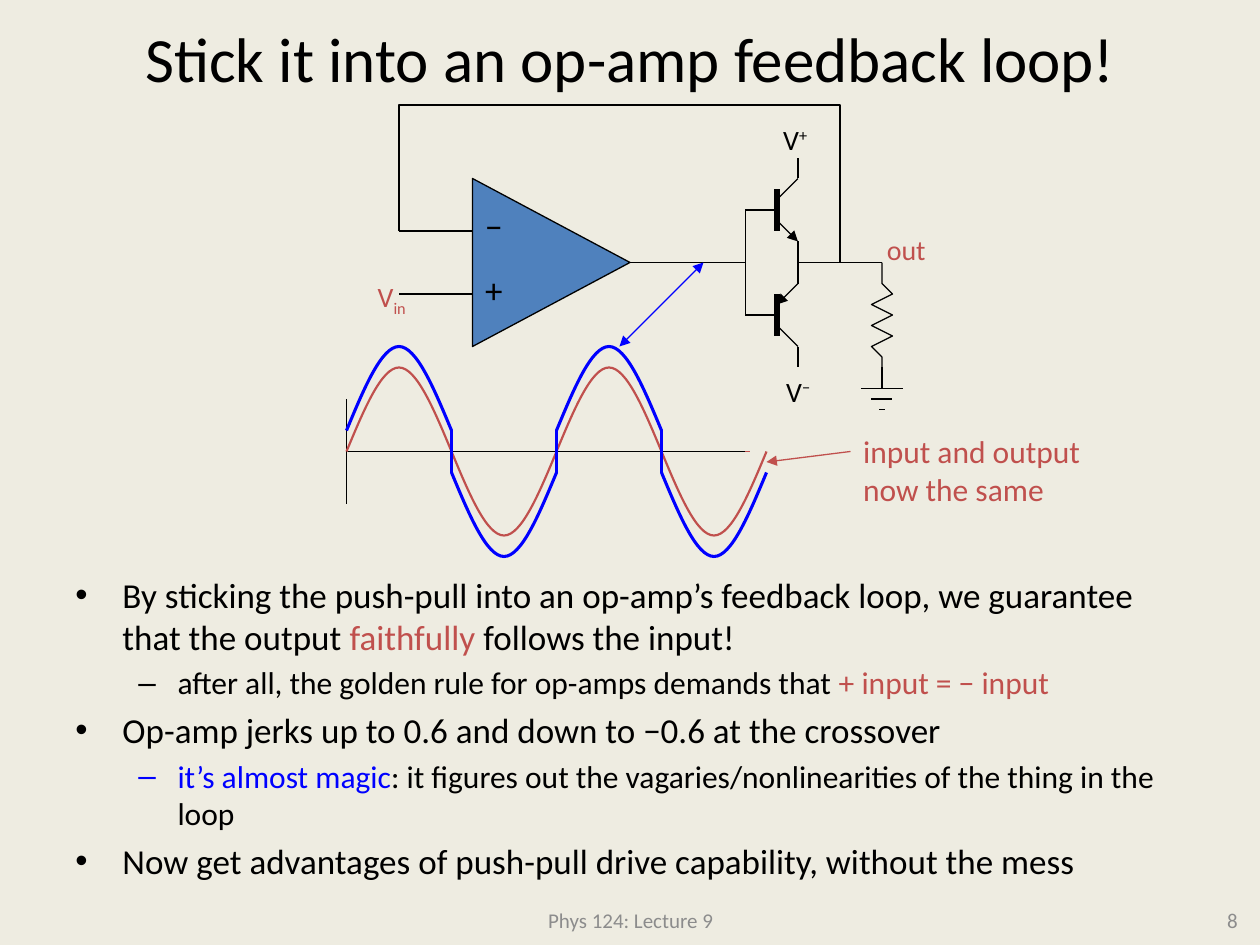
"""Slide on a push-pull stage inside an op-amp feedback loop."""
from lxml.etree import SubElement
from pptx import Presentation
from pptx.dml.color import RGBColor
from pptx.enum.shapes import MSO_CONNECTOR, MSO_SHAPE
from pptx.enum.text import MSO_ANCHOR, PP_ALIGN
from pptx.oxml.ns import qn
from pptx.util import Cm, Pt

COLORS = {"paper": "EEECE1", "black": "000000", "gray": "8C8C8C",
          "red": "C0504D", "blue": "0000FF", "amp": "4F81BD"}
RGB = {name: RGBColor.from_string(value) for name, value in COLORS.items()}
GRID = Cm(2.54) // 12
LEFT, CENTER, RIGHT = PP_ALIGN.LEFT, PP_ALIGN.CENTER, PP_ALIGN.RIGHT
TOP, MIDDLE = MSO_ANCHOR.TOP, MSO_ANCHOR.MIDDLE

prs = Presentation()
prs.slide_width, prs.slide_height = Cm(25.4), Cm(19.05)
s = prs.slides.add_slide(prs.slide_layouts[6])
s.background.fill.solid()
s.background.fill.fore_color.rgb = RGB["paper"]


def add_text(p, text, size=20, color="black", base=0):
    r = p.add_run()
    r.text = text
    r.font.name = "Calibri"
    r.font.size = Pt(size)
    r.font.color.rgb = RGB[color]
    if base:
        r._r.get_or_add_rPr().set("baseline", str(base * 1000))


def add_line(x1, y1, x2, y2, color="black", width=0.75, ends=()):
    ln = s.shapes.add_connector(MSO_CONNECTOR.STRAIGHT, *[round(v * GRID) for v in (x1, y1, x2, y2)])
    ln.line.color.rgb = RGB[color]
    ln.line.width = Pt(width)
    SubElement(ln._element.spPr, qn("a:effectLst"))
    for end in ends:
        SubElement(ln.line._get_or_add_ln(), qn(f"a:{end}")).set("type", "triangle")


bullets = [
    (0, [("By sticking the push-pull into an op-amp’s feedback loop, we guarantee that the output ", "black"),
         ("faithfully", "red"), (" follows the input!", "black")]),
    (1, [("after all, the golden rule for op-amps demands that ", "black"), ("+ input = − input", "red")]),
    (0, [("Op-amp jerks up to 0.6 and down to −0.6 at the crossover", "black")]),
    (1, [("it’s almost magic", "blue"),
         (": it figures out the vagaries/nonlinearities of the thing in the loop", "black")]),
    (0, [("Now get advantages of push-pull drive capability, without the mess", "black")]),
]
levels = [("•", 20, Cm(0.95), Cm(-0.95)), ("–", 18, Cm(2.06), Cm(-0.79))]
tf = s.shapes.add_textbox(Cm(1.27), Cm(11.43), Cm(22.66), Cm(6.99)).text_frame
tf.word_wrap = True
for i, (level, runs) in enumerate(bullets):
    p = tf.add_paragraph() if i else tf.paragraphs[0]
    mark, size, margin, indent = levels[level]
    p.level = level
    p.space_before = Pt(size * 0.2)
    pPr = p._p.get_or_add_pPr()
    pPr.set("marL", str(margin))
    pPr.set("indent", str(indent))
    SubElement(pPr, qn("a:buFont")).set("typeface", "Arial")
    SubElement(pPr, qn("a:buChar")).set("char", mark)
    for text, color in runs:
        add_text(p, text, size=size, color=color)

amp = s.shapes.add_shape(MSO_SHAPE.ISOSCELES_TRIANGLE, round(44.5 * GRID), round(17.5 * GRID), 16 * GRID, 15 * GRID)
amp.rotation = 90
amp.shadow.inherit = False
amp.fill.solid()
amp.fill.fore_color.rgb = RGB["amp"]
amp.line.color.rgb = RGB["black"]
amp.line.width = Pt(0.75)

wires = [(45, 28, 38, 28), (45, 22, 38, 22), (60, 25, 68, 25), (71, 25, 66, 25),
         (71, 20, 71, 30), (76, 25, 84, 25), (84, 35, 84, 37), (82, 37, 86, 37),
         (83, 38, 85, 38), (83.75, 39, 84.25, 39), (33, 38, 33, 48)]
for wire in wires:
    add_line(*wire)
add_line(33.5, 43, 71.4, 43, color="red")
add_line(33, 43, 71, 43)

for side in (-1, 1):
    mid = 25 + 5 * side
    add_line(74, mid - 2, 74, mid + 2, width=3)
    add_line(74, mid + side, 76, mid + 3 * side)
    add_line(76, mid + 3 * side, 76, mid + 5 * side)
    add_line(74, mid, 71, mid)
    add_line(76, mid - 3 * side, 76, 25)
    emitter = [(74, mid - side), (76, mid - 3 * side)][::-side]
    add_line(*emitter[0], *emitter[1], ends=["tailEnd"])

zigzag = [(85 - 2 * (i % 2), 28 + i) for i in range(6)]
outlines = [
    [(84, 25), (84, 27), *zigzag, (84, 34), (84, 35)],
    [(38, 22), (38, 10), (80, 10), (80, 25)],
]
for points in outlines:
    fb = s.shapes.build_freeform(*points[0], scale=GRID)
    fb.add_line_segments(points[1:], close=False)
    sp = fb.convert_to_shape()
    sp.shadow.inherit = False
    sp.fill.background()
    sp.line.color.rgb = RGB["black"]
    sp.line.width = Pt(0.75)

for color, width, gap in [("red", 1.25, 0), ("blue", 1.75, 2)]:
    for i in range(4):
        side = 1 if i % 2 else -1
        x, y = 33 + 10 * i, 43 + gap * side
        fb = s.shapes.build_freeform(x * GRID, y * GRID)
        fb.add_line_segments([((x + 5) * GRID, (y + 8 * side) * GRID), ((x + 10) * GRID, y * GRID)], close=False)
        sp = fb.convert_to_shape()
        sp.shadow.inherit = False
        sp.fill.background()
        sp.line.color.rgb = RGB[color]
        sp.line.width = Pt(width)
        foot = 8 if side < 0 else 0
        peak = 8 - foot
        curves = [[(5 / 3, 4), (10 / 3, peak), (5, peak)], [(20 / 3, peak), (25 / 3, 4), (10, foot)]]
        path = sp._element.find(".//" + qn("a:path"))
        for segment, curve in zip(path.findall(qn("a:lnTo")), curves):
            path.remove(segment)
            bezier = SubElement(path, qn("a:cubicBezTo"))
            for px, py in curve:
                pt = SubElement(bezier, qn("a:pt"))
                pt.set("x", str(round(px * GRID)))
                pt.set("y", str(round(py * GRID)))
for x in (43, 53, 63):
    add_line(x, 41, x, 45, color="blue", width=1.75)
add_line(59, 33, 67, 25, color="blue", ends=["headEnd", "tailEnd"])
add_line(81, 43, 73, 44, color="red", ends=["tailEnd"])

labels = [
    (8.69, 18.03, 8.05, 1.02, CENTER, MIDDLE, 12, "gray", [[("Phys 124: Lecture 9", 0)]]),
    (19.28, 18.03, 5.92, 1.02, RIGHT, MIDDLE, 12, "gray", [[("8", 0)]]),
    (1.91, -0.43, 21.59, 3.18, CENTER, MIDDLE, 36, "black", [[("Stick it into an op-amp feedback loop!", 0)]]),
    (9.53, 3.99, 0.89, 1.09, LEFT, TOP, 20, "black", [[("−", 0)]]),
    (9.53, 5.28, 0.91, 1.09, LEFT, TOP, 20, "black", [[("+", 0)]]),
    (7.24, 5.51, 1.19, 0.94, RIGHT, TOP, 16, "red", [[("V", 0), ("in", -25)]]),
    (17.63, 4.57, 1.3, 0.94, LEFT, TOP, 16, "red", [[("out", 0)]]),
    (15.54, 2.34, 1.12, 0.94, LEFT, TOP, 16, "black", [[("V", 0), ("+", 30)]]),
    (15.6, 7.42, 1.09, 0.94, LEFT, TOP, 16, "black", [[("V", 0), ("−", 30)]]),
    (17.15, 8.59, 5.23, 1.78, LEFT, TOP, 18, "red", [[("input and output", 0)], [("now the same", 0)]]),
]
for x, y, w, h, align, anchor, size, color, paragraphs in labels:
    tf = s.shapes.add_textbox(Cm(x), Cm(y), Cm(w), Cm(h)).text_frame
    tf.word_wrap = anchor == MIDDLE
    tf.vertical_anchor = anchor
    for i, runs in enumerate(paragraphs):
        p = tf.add_paragraph() if i else tf.paragraphs[0]
        p.alignment = align
        for text, base in runs:
            add_text(p, text, size=size, color=color, base=base)

prs.save("out.pptx")
